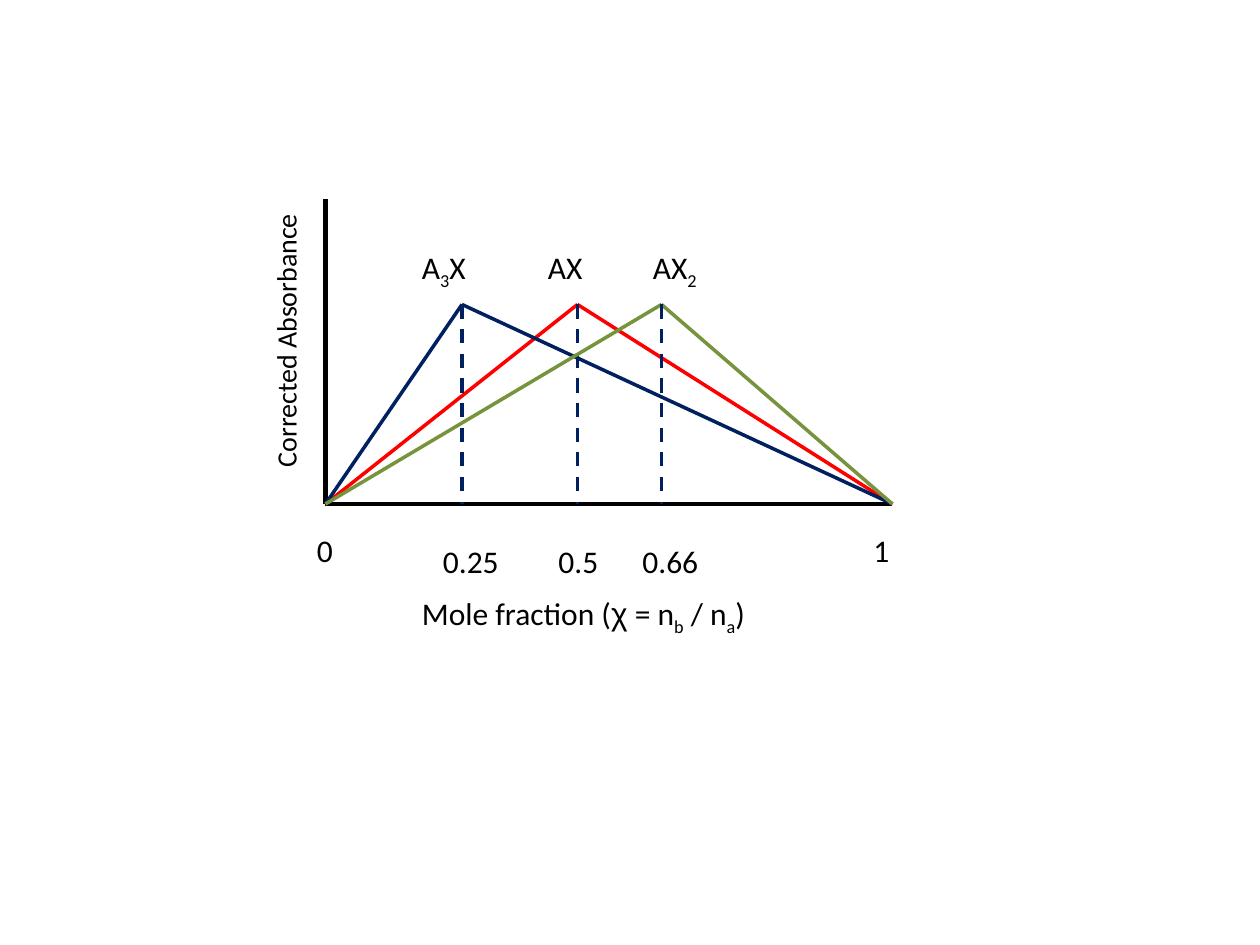
"""Build a Job plot slide: corrected absorbance against mole fraction."""
from pptx import Presentation
from pptx.dml.color import RGBColor
from pptx.enum.dml import MSO_LINE
from pptx.enum.shapes import MSO_CONNECTOR
from pptx.enum.text import MSO_AUTO_SIZE
from pptx.oxml.ns import qn
from pptx.util import Pt
from lxml.etree import SubElement

COLORS = {"black": "000000", "red": "FF0000", "navy": "002060", "green": "77933C"}

deck = Presentation()
deck.slide_width, deck.slide_height = Pt(720), Pt(540)
slide = deck.slides.add_slide(deck.slide_layouts[6])


def add_line(start, end, color, width, dash=None):
    line = slide.shapes.add_connector(
        MSO_CONNECTOR.STRAIGHT, *(Pt(v) for v in (*start, *end)))
    line.line.color.rgb = RGBColor.from_string(COLORS[color])
    line.line.width = Pt(width)
    if dash:
        line.line.dash_style = dash
    SubElement(line._element.spPr, qn("a:effectLst"))


def add_label(parts, left, top, width, height=29, size=18, wrap=False):
    label = slide.shapes.add_textbox(Pt(left), Pt(top), Pt(width), Pt(height))
    frame = label.text_frame
    frame.word_wrap = wrap
    frame.auto_size = MSO_AUTO_SIZE.SHAPE_TO_FIT_TEXT
    paragraph = frame.paragraphs[0]
    paragraph.font.name = "Calibri"
    paragraph.font.size = Pt(size)
    paragraph.font.color.rgb = RGBColor.from_string(COLORS["black"])
    for text, style in parts:
        run = paragraph.add_run()
        run.text = text
        if style == "sub":
            run._r.get_or_add_rPr().set("baseline", "-25000")
        elif style == "greek":
            run.font.name = "Arial"
    return frame


origin, axis_end = (186, 288), (510, 288)
peak_y = 174

add_line((origin[0], 114), origin, "black", 2.5)
add_line(origin, axis_end, "black", 2.5)

curves = [("red", 330), ("navy", 264), ("green", 378)]
for color, peak_x in curves:
    peak = (peak_x, peak_y)
    add_line(origin, peak, color, 2)
    add_line(peak, axis_end, color, 2)
    add_line(peak, (peak_x, origin[1]), "navy", 2, MSO_LINE.DASH)

absorbance = add_label([("Corrected Absorbance", None)], 150, 116, 36, 158, size=16)
absorbance._txBody.bodyPr.set("vert", "vert270")

add_label([("Mole fraction (", None), ("χ", "greek"), (" = n", None), ("b", "sub"),
           (" / n", None), ("a", "sub"), (")", None)], 234, 336, 210)

for end_value, left in [("0", 174), ("1", 492)]:
    add_label([(end_value, None)], left, 300, 24)

complexes = [
    ([("A", None), ("3", "sub"), ("X", None)], 234),
    ([("AX", None)], 306),
    ([("AX", None), ("2", "sub")], 366),
]
for formula, left in complexes:
    add_label(formula, left, 138, 48, wrap=True)

for fraction, left, width in [("0.25", 246, 54), ("0.5", 312, 42), ("0.66", 360, 54)]:
    add_label([(fraction, None)], left, 306, width, wrap=True)

deck.save("out.pptx")
